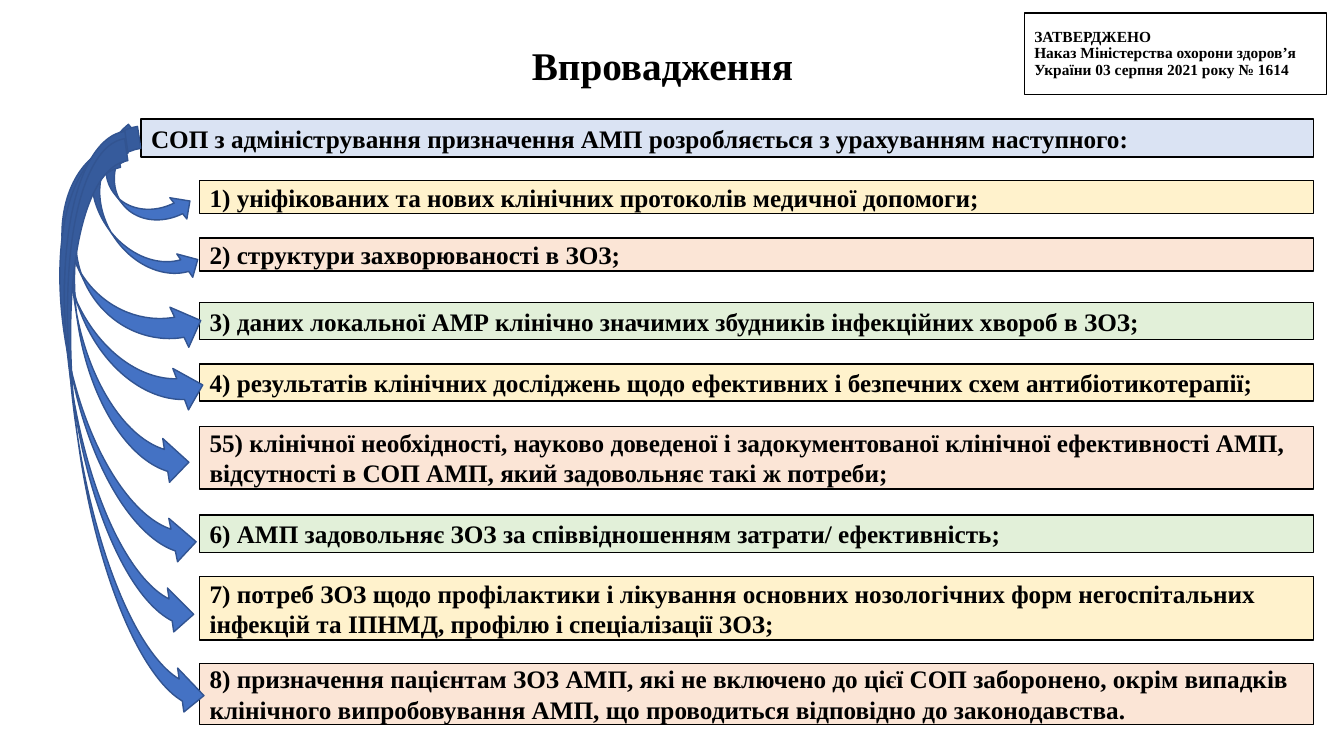
"""Build the slide on what an antimicrobial prescribing procedure must consider."""
from dataclasses import dataclass
from itertools import cycle

from lxml.etree import SubElement
from pptx import Presentation
from pptx.dml.color import RGBColor
from pptx.enum.shapes import MSO_SHAPE as Shape
from pptx.enum.text import MSO_ANCHOR as Anchor, PP_ALIGN as Align
from pptx.oxml.ns import qn
from pptx.util import Inches, Pt

FONT = "Times New Roman"
BLACK = "000000"
ARROW_FILL, ARROW_LINE = "4472C4", "325491"
HEADER_FILL = "DAE3F3"
ITEM_FILLS = ("FFF2CC", "FBE5D6", "E2F0D9")
ITEM_LEFT, ITEM_WIDTH = 1.98, 11.05


@dataclass
class Item:
    top: float
    height: float
    text: str


@dataclass
class Arrow:
    left: float
    top: float
    width: float
    height: float
    rotation: float


APPROVAL = ("ЗАТВЕРДЖЕНО \nНаказ Міністерства охорони здоров’я "
            "України 03 серпня 2021 року № 1614")
HEADER = "СОП з адміністрування призначення АМП розробляється з урахуванням наступного:"

ITEMS = [
    Item(1.79, 0.33, "1) уніфікованих та нових клінічних протоколів медичної допомоги;"),
    Item(2.36, 0.33, "2) структури захворюваності в ЗОЗ;"),
    Item(3.0, 0.37, "3) даних локальної АМР клінічно значимих збудників "
                    "інфекційних хвороб в ЗОЗ;"),
    Item(3.61, 0.37, "4) результатів клінічних досліджень щодо ефективних "
                     "і безпечних схем антибіотикотерапії;"),
    Item(4.23, 0.62, "55) клінічної необхідності, науково доведеної і задокументованої "
                     "клінічної ефективності АМП, відсутності в СОП АМП, "
                     "який задовольняє такі ж потреби;"),
    Item(5.11, 0.37, "6) АМП задовольняє ЗОЗ за співвідношенням затрати/ ефективність;"),
    Item(5.72, 0.63, "7) потреб ЗОЗ щодо профілактики і лікування основних нозологічних "
                     "форм негоспітальних інфекцій та ІПНМД, профілю і спеціалізації ЗОЗ;"),
    Item(6.58, 0.61, "8) призначення пацієнтам ЗОЗ АМП, які не включено до цієї СОП "
                     "заборонено, окрім випадків клінічного випробовування АМП, "
                     "що проводиться відповідно до законодавства."),
]

ARROWS = [
    Arrow(1.14, 1.28, 0.54, 1.11, 321.3),
    Arrow(1.07, 1.36, 0.56, 1.63, 325.7),
    Arrow(0.78, 1.48, 0.88, 2.19, 334.8),
    Arrow(0.75, 1.51, 0.88, 2.76, 339.3),
    Arrow(0.76, 1.3, 0.88, 3.59, 351.3),
    Arrow(0.7, 1.49, 0.88, 4.23, 348.6),
    Arrow(0.72, 1.34, 0.88, 5.06, 351.9),
    Arrow(0.77, 1.41, 0.88, 5.8, 351.9),
]


def color(value: str) -> RGBColor:
    return RGBColor.from_string(value)


def write(box, text: str, *, size: float = 18, align=Align.LEFT,
          spacing: float | None = None) -> None:
    frame = box.text_frame
    frame.word_wrap = True
    frame.vertical_anchor = Anchor.MIDDLE
    para = frame.paragraphs[0]
    para.text = text
    para.alignment = align
    para.line_spacing = spacing
    for span in para.runs:
        span.font.name = FONT
        span.font.size = Pt(size)
        span.font.bold = True
        span.font.color.rgb = color(BLACK)
    for line_break in para._p.findall(qn("a:br")):
        SubElement(line_break, qn("a:rPr"), sz=str(int(size * 100)))


def add_shape(page, kind, left: float, top: float, width: float, height: float,
              *, fill: str | None = None, line: str = BLACK):
    shape = page.shapes.add_shape(
        kind, Inches(left), Inches(top), Inches(width), Inches(height))
    shape.shadow.inherit = False
    if fill:
        shape.fill.solid()
        shape.fill.fore_color.rgb = color(fill)
    else:
        shape.fill.background()
    shape.line.color.rgb = color(line)
    shape.line.width = Pt(1)
    return shape


def add_title(page, text: str) -> None:
    title = page.shapes.title
    title.left, title.top = Inches(4.44), Inches(0.4)
    title.width, title.height = Inches(4.26), Inches(0.55)
    write(title, text, size=28, align=Align.CENTER, spacing=0.9)


def add_arrow(page, arrow: Arrow) -> None:
    shape = add_shape(page, Shape.CURVED_RIGHT_ARROW, arrow.left, arrow.top,
                      arrow.width, arrow.height, fill=ARROW_FILL, line=ARROW_LINE)
    shape.rotation = arrow.rotation


def main() -> None:
    deck = Presentation()
    deck.slide_width, deck.slide_height = Inches(13.33), Inches(7.5)
    page = deck.slides.add_slide(deck.slide_layouts[5])
    add_title(page, "Впровадження")

    approval = add_shape(page, Shape.RECTANGLE, 10.16, 0.13, 3, 0.81)
    write(approval, APPROVAL, size=11, spacing=0.9)
    header = add_shape(page, Shape.RECTANGLE, 1.4, 1.18, 11.63, 0.38, fill=HEADER_FILL)
    write(header, HEADER)

    for item, fill in zip(ITEMS, cycle(ITEM_FILLS)):
        box = add_shape(page, Shape.RECTANGLE, ITEM_LEFT, item.top,
                        ITEM_WIDTH, item.height, fill=fill)
        write(box, item.text)
    for arrow in ARROWS:
        add_arrow(page, arrow)
    deck.save("out.pptx")


if __name__ == "__main__":
    main()
